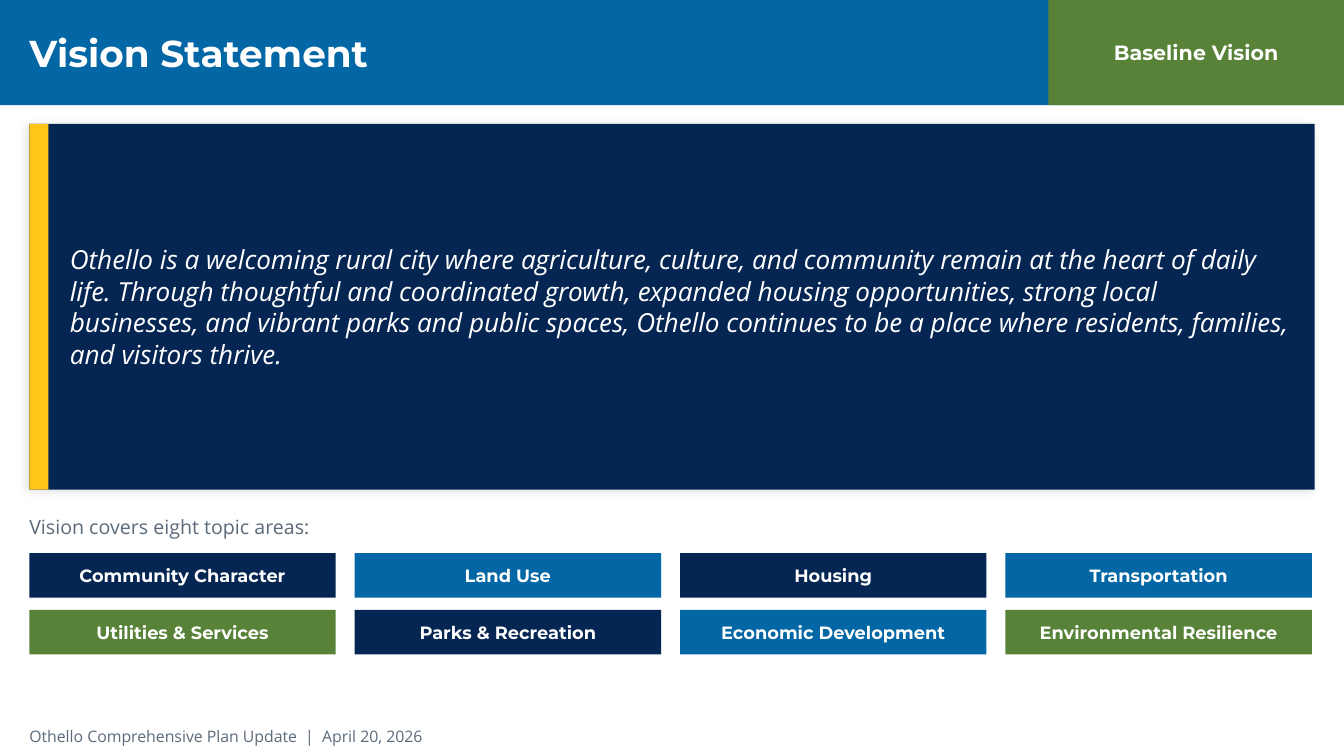
from lxml.etree import fromstring
from pptx import Presentation
from pptx.dml.color import RGBColor
from pptx.enum.shapes import MSO_SHAPE
from pptx.enum.text import MSO_ANCHOR, MSO_AUTO_SIZE, PP_ALIGN
from pptx.util import Cm, Pt

# Content
TITLE = "Vision Statement"
TAG = "Baseline Vision"
VISION = (
    "Othello is a welcoming rural city where agriculture, culture, and community "
    "remain at the heart of daily life. Through thoughtful and coordinated growth, "
    "expanded housing opportunities, strong local businesses, and vibrant parks and "
    "public spaces, Othello continues to be a place where residents, families, and "
    "visitors thrive."
)
INTRO = "Vision covers eight topic areas:"
FOOTER = "Othello Comprehensive Plan Update  |  April 20, 2026"
TOPICS = [
    [("Community Character", "navy"), ("Land Use", "blue"),
     ("Housing", "navy"), ("Transportation", "blue")],
    [("Utilities & Services", "green"), ("Parks & Recreation", "navy"),
     ("Economic Development", "blue"), ("Environmental Resilience", "green")],
]

# Look
COLORS = {"blue": "0367A5", "green": "578238", "navy": "052652",
          "gold": "FFC61A", "gray": "5A6A7A", "white": "FFFFFF"}
HEAD = {"name": "Montserrat", "bold": True}
BODY = {"name": "Open Sans"}
FRAME = {"margin_left": 0, "margin_right": 0, "margin_top": 0, "margin_bottom": 0,
         "word_wrap": True, "auto_size": MSO_AUTO_SIZE.NONE,
         "vertical_anchor": MSO_ANCHOR.MIDDLE}
SHADOW = (
    '<a:effectLst xmlns:a="http://schemas.openxmlformats.org/drawingml/2006/main">'
    '<a:outerShdw blurRad="76200" dist="25400" dir="8100000" rotWithShape="0">'
    '<a:srgbClr val="000000"><a:alpha val="13000"/></a:srgbClr>'
    '</a:outerShdw></a:effectLst>'
)

# Measures in centimetres
WIDE, HIGH = 33.87, 19.05
EDGE, BAR = 0.74, 2.65
SPAN = 32.39
TAG_X = 26.42
CARD_Y, CARD_H = 3.12, 9.22
CHIP_Y, CHIP_W, CHIP_H = 13.94, 7.72, 1.12
STEP_X, STEP_Y = 8.2, 1.43


def rgb(key):
    return RGBColor.from_string(COLORS[key])


def apply(item, values):
    for key, value in values.items():
        setattr(item, key, value)


def write(shape, text, size, face, color="white", align=PP_ALIGN.LEFT):
    frame = shape.text_frame
    apply(frame, FRAME)
    line = frame.paragraphs[0]
    line.alignment = align
    run = line.add_run()
    run.text = text
    apply(run.font, {"size": Pt(size), **face})
    run.font.color.rgb = rgb(color)


def block(x, y, w, h, color):
    shape = slide.shapes.add_shape(MSO_SHAPE.RECTANGLE, Cm(x), Cm(y), Cm(w), Cm(h))
    shape.shadow.inherit = False
    shape.fill.solid()
    shape.fill.fore_color.rgb = rgb(color)
    shape.line.fill.background()
    return shape


def label(x, y, w, h, *style):
    write(slide.shapes.add_textbox(Cm(x), Cm(y), Cm(w), Cm(h)), *style)


deck = Presentation()
apply(deck, {"slide_width": Cm(WIDE), "slide_height": Cm(HIGH)})
slide = deck.slides.add_slide(deck.slide_layouts[5])

# Header band, with the title raised above it
block(0, 0, WIDE, BAR, "blue")
title = slide.shapes.title
apply(title, {"left": Cm(EDGE), "top": Cm(0), "width": Cm(25.4), "height": Cm(BAR)})
write(title, TITLE, 26.7, HEAD)
slide.shapes._spTree.append(title._element)
tag = block(TAG_X, 0, WIDE - TAG_X, BAR, "green")
write(tag, TAG, 14.7, HEAD, "white", PP_ALIGN.CENTER)

# Vision card
card = block(EDGE, CARD_Y, SPAN, CARD_H, "navy")
props = card._element.spPr
props.replace(props[-1], fromstring(SHADOW))
block(EDGE, CARD_Y, 0.48, CARD_H, "gold")
label(1.76, 3.39, 30.8, 8.67, VISION, 18.7, {**BODY, "italic": True})

# Topic grid
label(EDGE, 12.8, SPAN, 0.94, INTRO, 14, BODY, "gray")
for row, topics in enumerate(TOPICS):
    for col, (name, color) in enumerate(topics):
        chip = block(EDGE + col * STEP_X, CHIP_Y + row * STEP_Y, CHIP_W, CHIP_H, color)
        write(chip, name, 12.7, HEAD, "white", PP_ALIGN.CENTER)

# Footer
label(EDGE, 18.2, SPAN, 0.69, FOOTER, 11.3, BODY, "gray")

deck.save("out.pptx")
